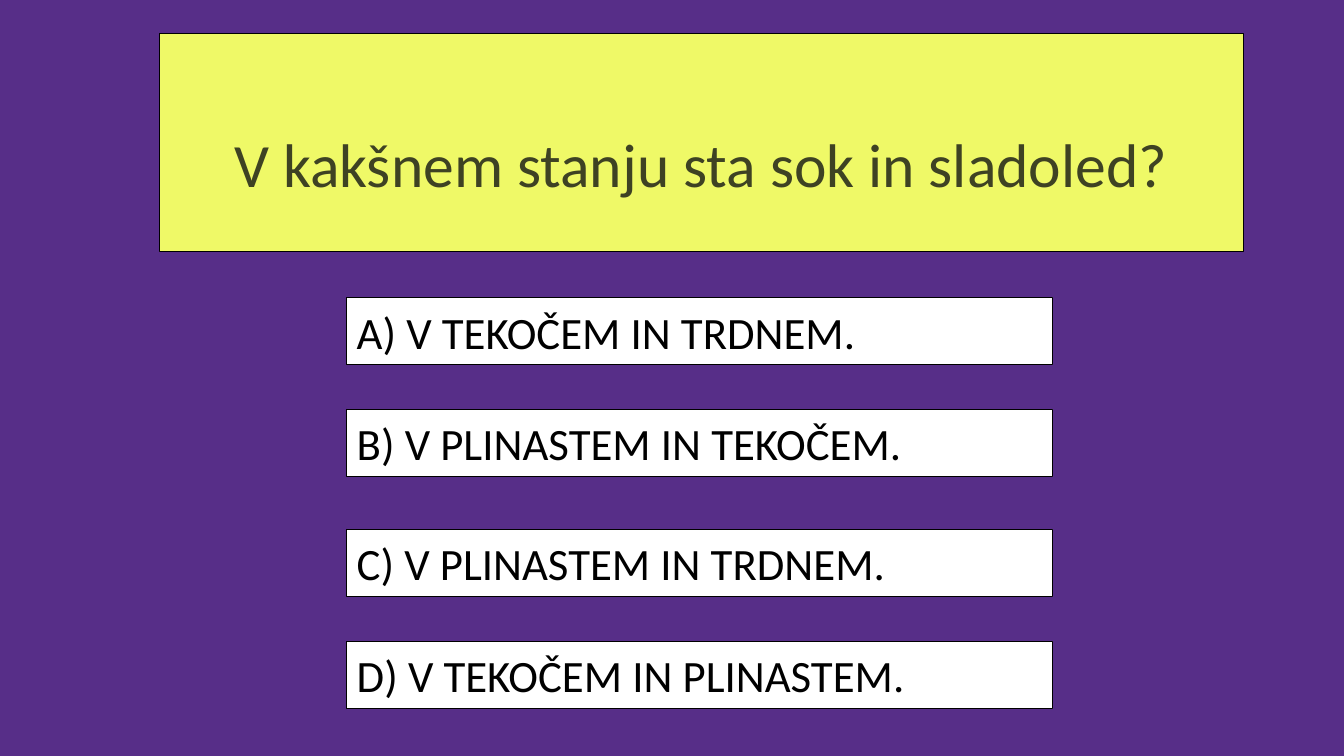
from pptx import Presentation
from pptx.dml.color import RGBColor
from pptx.enum.shapes import MSO_SHAPE
from pptx.enum.text import MSO_ANCHOR, PP_ALIGN
from pptx.util import Inches, Pt

PURPLE, YELLOW, OLIVE = "572E88", "EFF967", "3E4223"
WHITE, BLACK = "FFFFFF", "000000"

QUESTION = "V kakšnem stanju sta sok in sladoled?"
QUESTION_BOX = (1.58, 0.33, 10.75, 2.17)
QUESTION_INSET = 0.92

# Answer text and the top of its button, in inches
ANSWERS = [
    ("A) V TEKOČEM IN TRDNEM.", 2.95),
    ("B) V PLINASTEM IN TEKOČEM.", 4.06),
    ("C) V PLINASTEM IN TRDNEM.", 5.25),
    ("D) V TEKOČEM IN PLINASTEM.", 6.36),
]
ANSWER_LEFT, ANSWER_WIDTH, ANSWER_HEIGHT = 3.44, 7, 0.67


def color(hex_string):
    return RGBColor.from_string(hex_string)


def add_box(slide, kind, box, fill, text, size, text_color, align, anchor):
    """Add a thinly outlined shape with one line of text; return its text frame."""
    shape = slide.shapes.add_shape(kind, *map(Inches, box))
    shape.shadow.inherit = False
    shape.fill.solid()
    shape.fill.fore_color.rgb = color(fill)
    shape.line.color.rgb = color(BLACK)
    shape.line.width = Pt(0.75)
    frame = shape.text_frame
    frame.word_wrap = True
    frame.vertical_anchor = anchor
    paragraph = frame.paragraphs[0]
    paragraph.alignment = align
    run = paragraph.add_run()
    run.text = text
    run.font.name = "Calibri"
    run.font.size = Pt(size)
    run.font.color.rgb = color(text_color)
    return frame


def main():
    deck = Presentation()
    deck.slide_width, deck.slide_height = Inches(13.33), Inches(7.5)
    slide = deck.slides.add_slide(deck.slide_layouts[6])
    slide.background.fill.solid()
    slide.background.fill.fore_color.rgb = color(PURPLE)

    question = add_box(slide, MSO_SHAPE.RECTANGLE, QUESTION_BOX, YELLOW,
                       QUESTION, 44, OLIVE, PP_ALIGN.CENTER, MSO_ANCHOR.TOP)
    question.margin_top = Inches(QUESTION_INSET)

    for answer, top in ANSWERS:
        add_box(slide, MSO_SHAPE.ACTION_BUTTON_CUSTOM,
                (ANSWER_LEFT, top, ANSWER_WIDTH, ANSWER_HEIGHT), WHITE,
                answer, 32, BLACK, PP_ALIGN.LEFT, MSO_ANCHOR.MIDDLE)

    deck.save("out.pptx")


if __name__ == "__main__":
    main()
